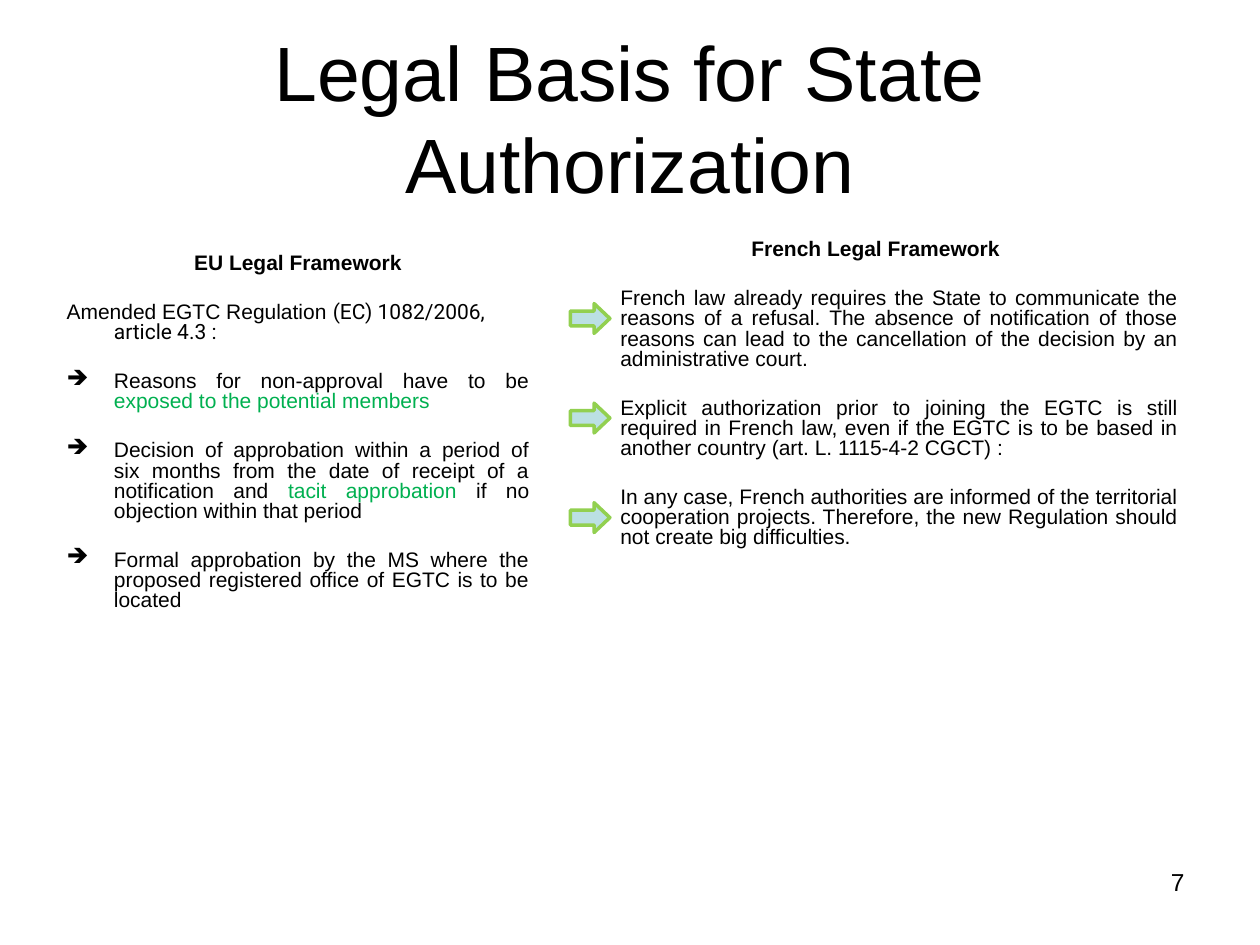
"""Build a slide comparing EU and French rules on State authorization."""
from dataclasses import dataclass

from lxml.etree import SubElement
from pptx import Presentation
from pptx.dml.color import RGBColor
from pptx.enum.shapes import MSO_SHAPE as Shape
from pptx.enum.text import MSO_ANCHOR as Anchor
from pptx.enum.text import MSO_AUTO_SIZE as Fit
from pptx.enum.text import PP_ALIGN as Align
from pptx.oxml.ns import qn
from pptx.util import Pt

BLACK, GREEN = "000000", "00B050"
HANG, GAP = 27, 16.5


@dataclass(frozen=True)
class Span:
    text: str
    color: str = BLACK
    font: str = "Arial"


@dataclass(frozen=True)
class Item:
    spans: tuple[Span, ...]
    align: Align = Align.JUSTIFY
    bold: bool = False
    margin: float = HANG
    indent: float = 0
    bullet: str = ""


@dataclass(frozen=True)
class Box:
    left: float
    top: float
    width: float
    height: float


def paint(target, color: str) -> None:
    target.rgb = RGBColor.from_string(color)


def add_box(slide, box: Box, *, inset: float = 3.6, anchor=Anchor.TOP, fit=Fit.NONE):
    frame = slide.shapes.add_textbox(
        Pt(box.left), Pt(box.top), Pt(box.width), Pt(box.height)).text_frame
    frame.word_wrap = True
    frame.auto_size = fit
    frame.margin_top = Pt(inset)
    frame.vertical_anchor = anchor
    return frame


def write(para, text: tuple[Span, ...], *, size: float, align=Align.LEFT, bold=False,
          margin: float = 0, indent: float = 0, bullet="", lines: float = 1,
          before: float = 0) -> None:
    props = para._p.get_or_add_pPr()
    props.set("marL", str(Pt(margin)))
    props.set("indent", str(Pt(indent)))
    if bullet:
        SubElement(props, qn("a:buChar")).set("char", bullet)
    else:
        SubElement(props, qn("a:buNone"))
    para.alignment = align
    para.line_spacing = lines
    para.space_before = Pt(before)
    for span in text:
        run = para.add_run()
        run.text = span.text
        run.font.size = Pt(size)
        run.font.name = span.font
        run.font.bold = bold
        paint(run.font.color, span.color)


def fill_list(frame, items: list[Item]) -> None:
    for rank, item in enumerate(items):
        para = frame.add_paragraph() if rank else frame.paragraphs[0]
        write(para, item.spans, size=12, align=item.align, bold=item.bold,
              margin=item.margin, indent=item.indent, bullet=item.bullet,
              lines=0.8, before=GAP if rank else 0)


def draw_arrow(slide, box: Box) -> None:
    arrow = slide.shapes.add_shape(
        Shape.RIGHT_ARROW, Pt(box.left), Pt(box.top), Pt(box.width), Pt(box.height))
    arrow.shadow.inherit = False
    arrow.adjustments[1] = 0.53
    arrow.fill.solid()
    paint(arrow.fill.fore_color, "BBE0E3")
    paint(arrow.line.color, "92D050")
    arrow.line.width = Pt(2)


def head(text: str) -> Item:
    return Item((Span(text),), Align.CENTER, bold=True, margin=0)


def point(*spans: Span) -> Item:
    return Item(spans, indent=-HANG, bullet="➔")


EU_RULES = [
    head("EU Legal Framework"),
    Item((Span("Amended EGTC Regulation "),
          Span("(EC) 1082/2006, article 4.3 :", font="Roboto")),
         Align.LEFT, indent=-HANG),
    point(Span("Reasons for non-approval have to be "),
          Span("exposed to the potential members", GREEN)),
    point(Span("Decision of approbation within a period of six months from the date "
               "of receipt of a notification and "),
          Span("tacit approbation ", GREEN),
          Span("if no objection within that period")),
    point(Span("Formal approbation by the MS where the proposed registered office "
               "of EGTC is to be located")),
]
FRENCH_RULES = [
    head("French Legal Framework"),
    Item((Span("French law already requires the State to communicate the reasons of "
               "a refusal. The absence of notification of those reasons can lead to "
               "the cancellation of the decision by an administrative court."),)),
    Item((Span("Explicit authorization prior to joining the EGTC is still required in "
               "French law, even if the EGTC is to be based in another country "
               "(art. L. 1115-4-2 CGCT) :"),)),
    Item((Span("In any case, French authorities are informed of the territorial "
               "cooperation projects. Therefore, the new Regulation should not create "
               "big difficulties."),)),
]


def main() -> None:
    deck = Presentation()
    deck.slide_width, deck.slide_height = Pt(720), Pt(540)
    slide = deck.slides.add_slide(deck.slide_layouts[6])

    title = add_box(slide, Box(36, 21.6, 648, 90), anchor=Anchor.MIDDLE)
    write(title.paragraphs[0], (Span("Legal Basis for State Authorization"),),
          size=44, align=Align.CENTER)
    fill_list(add_box(slide, Box(31, 122.4, 278.6, 356.4), inset=23), EU_RULES)
    number = add_box(slide, Box(516, 492, 168, 37.5))
    write(number.paragraphs[0], (Span("7"),), size=14, align=Align.RIGHT)
    french = add_box(slide, Box(320.4, 134, 360, 188), fit=Fit.SHAPE_TO_FIT_TEXT)
    fill_list(french, FRENCH_RULES)
    for row in range(3):
        draw_arrow(slide, Box(326, 173.5 + row * 56.9, 22.5, 17))
    deck.save("out.pptx")


if __name__ == "__main__":
    main()
